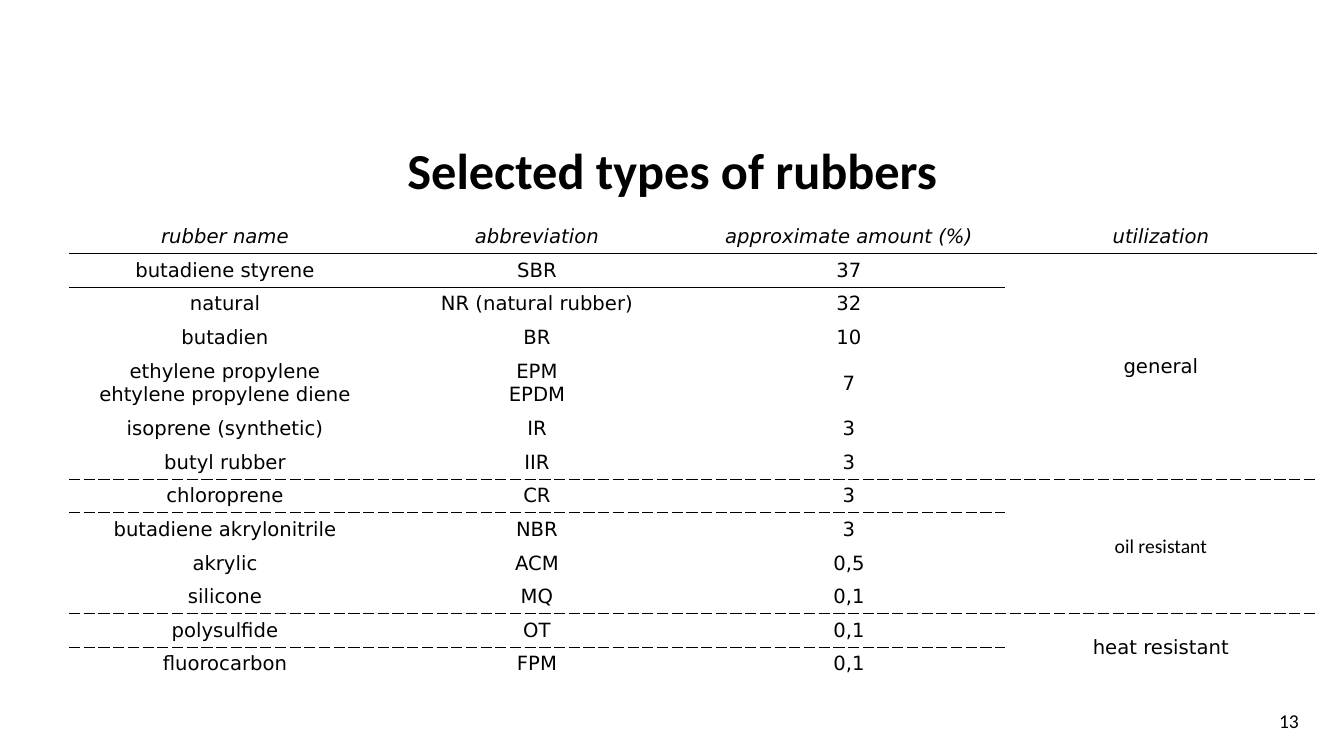
from lxml import etree
from pptx import Presentation
from pptx.dml.color import RGBColor
from pptx.enum.text import MSO_ANCHOR, PP_ALIGN
from pptx.oxml.ns import qn
from pptx.util import Pt

MIDDLE = MSO_ANCHOR.MIDDLE
CENTER = PP_ALIGN.CENTER
PX = 914400 / 100.8
COLORS = {"text": "000000", "rule": "000000"}
PLAIN_TABLE = "{2D5ABB26-0587-4C30-8999-92F81FD0307C}"


def px(*lengths):
    return [round(length * PX) for length in lengths]


def write(frame, text, size=14, font="DejaVu Sans", bold=False, italic=False, spacing=None):
    frame.word_wrap = True
    for index, line in enumerate(text.split("\n")):
        paragraph = frame.add_paragraph() if index else frame.paragraphs[0]
        paragraph.alignment = CENTER
        if spacing:
            paragraph.line_spacing = spacing
        run = paragraph.add_run()
        run.text = line
        run.font.size = Pt(size)
        run.font.name = font
        run.font.bold = bold
        run.font.italic = italic
        run.font.color.rgb = RGBColor.from_string(COLORS["text"])


prs = Presentation()
prs.slide_width, prs.slide_height = px(1344, 756)
slide = prs.slides.add_slide(prs.slide_layouts[5])

page_number = slide.shapes.add_textbox(*px(1261, 701, 56, 40))
page_number.text_frame.vertical_anchor = MIDDLE
write(page_number.text_frame, "13", font="Calibri")

title = slide.shapes.title
title.left, title.top, title.width, title.height = px(93, 100, 1159, 146)
title.text_frame.vertical_anchor = MIDDLE
write(title.text_frame, "Selected types of rubbers", size=36, font="Calibri", bold=True, spacing=0.9)

rubbers = [
    ("rubber name", "abbreviation", "approximate amount (%)"),
    ("butadiene styrene", "SBR", "37"),
    ("natural", "NR (natural rubber)", "32"),
    ("butadien", "BR", "10"),
    ("ethylene propylene\nehtylene propylene diene", "EPM\nEPDM", "7"),
    ("isoprene (synthetic)", "IR", "3"),
    ("butyl rubber", "IIR", "3"),
    ("chloroprene", "CR", "3"),
    ("butadiene akrylonitrile", "NBR", "3"),
    ("akrylic", "ACM", "0,5"),
    ("silicone", "MQ", "0,1"),
    ("polysulfide", "OT", "0,1"),
    ("fluorocarbon", "FPM", "0,1"),
]
utilizations = [
    (0, 0, "utilization", "DejaVu Sans"),
    (1, 6, "general", "DejaVu Sans"),
    (7, 10, "oil resistant", "Calibri"),
    (11, 12, "heat resistant", "DejaVu Sans"),
]
SOLID, DASHED = (1, "solid"), (0.5, "lgDash")
rules = {0: SOLID, 1: SOLID, 6: DASHED, 7: DASHED, 10: DASHED, 11: DASHED}

table = slide.shapes.add_table(len(rubbers), 4, *px(69, 220, 1248, 32 * len(rubbers))).table
table.first_row = False
table.horz_banding = False
table._tbl.tblPr.find(qn("a:tableStyleId")).text = PLAIN_TABLE
for row in table.rows:
    row.height = px(32)[0]

for row, values in enumerate(rubbers):
    for column, value in enumerate(values):
        write(table.cell(row, column).text_frame, value, italic=row == 0)

last_row_of_group = {}
for first, last, utilization, font in utilizations:
    group = table.cell(first, 3)
    if last > first:
        group.merge(table.cell(last, 3))
    write(group.text_frame, utilization, font=font, italic=first == 0)
    for row in range(first, last + 1):
        last_row_of_group[row] = last

for row in range(len(rubbers)):
    for column in range(4):
        cell = table.cell(row, column)
        cell.vertical_anchor = MIDDLE
        rule = rules.get(last_row_of_group[row] if column == 3 else row)
        if rule:
            width, dash = rule
            border = etree.SubElement(cell._tc.get_or_add_tcPr(), qn("a:lnB"), w=str(Pt(width)))
            ink = etree.SubElement(border, qn("a:solidFill"))
            etree.SubElement(ink, qn("a:srgbClr"), val=COLORS["rule"])
            etree.SubElement(border, qn("a:prstDash"), val=dash)
        cell.fill.background()

prs.save("out.pptx")
